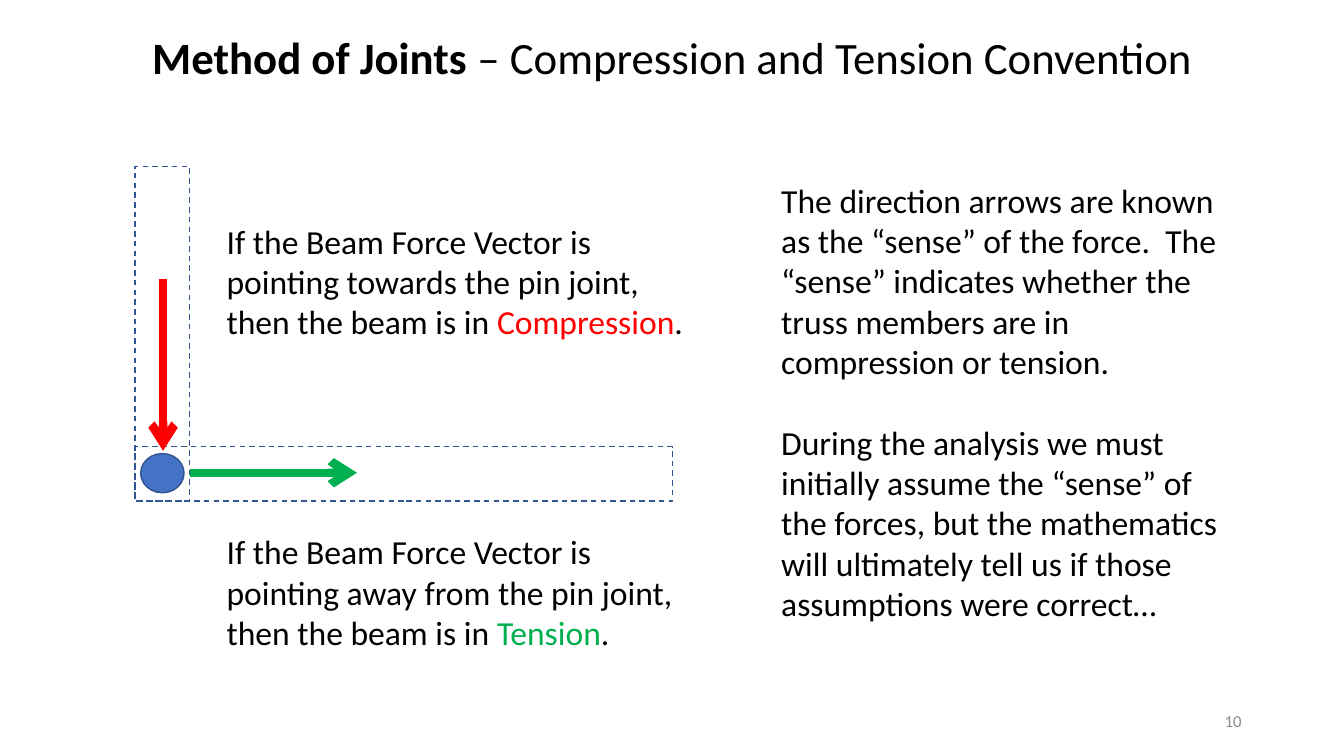
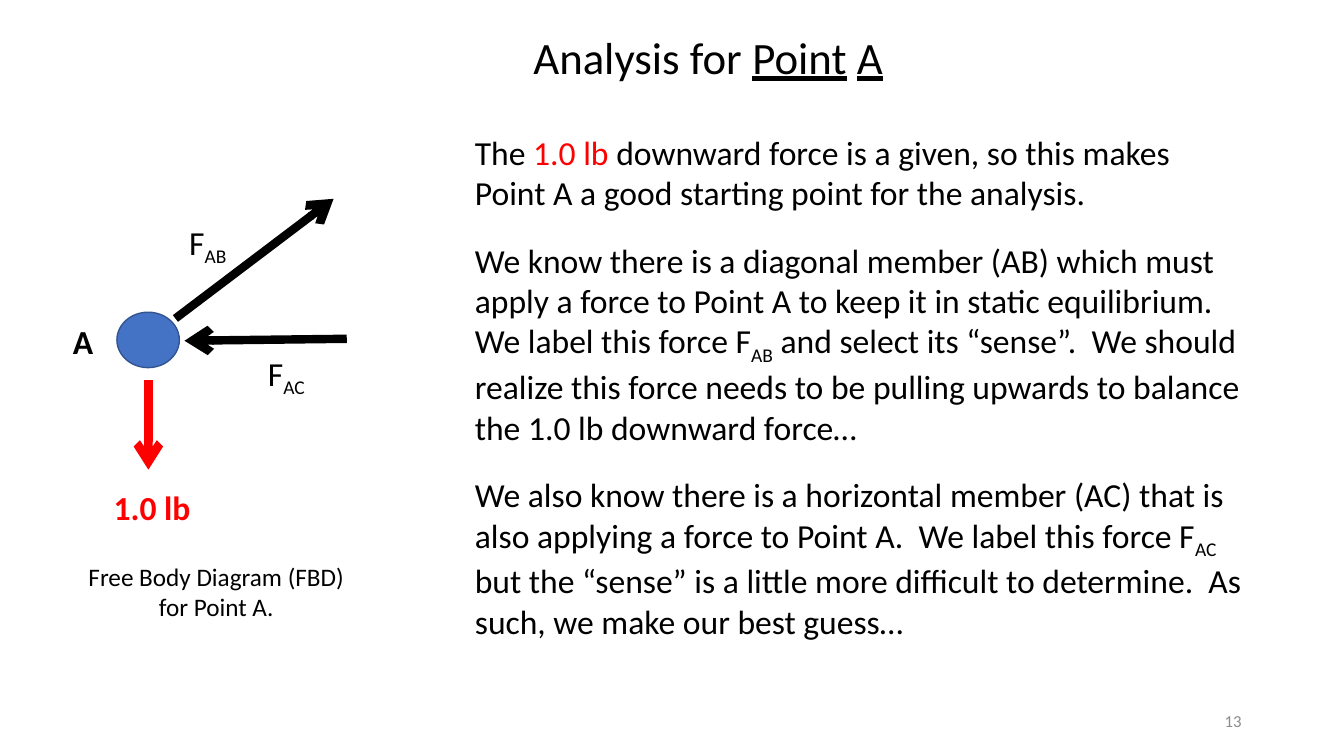
from dataclasses import dataclass

from lxml import etree
from pptx import Presentation
from pptx.dml.color import RGBColor
from pptx.enum import dml, shapes, text
from pptx.oxml import ns
from pptx.util import Pt


@dataclass(frozen=True)
class Theme:
    font: str = "Calibri"
    ink: str = "000000"
    grey: str = "8C8C8C"
    red: str = "FF0000"
    green: str = "00B050"
    blue: str = "4472C4"
    edge: str = "325491"
    title: int = 32
    body: int = 24
    note: int = 18
    foot: int = 12
    force: int = 6
    thin: int = 1


T = Theme()
ALIGN = text.PP_ALIGN
SHAPE = shapes.MSO_SHAPE


def rgb(code):
    return RGBColor.from_string(code)


def place(shape, box):
    shape.left, shape.top, shape.width, shape.height = map(Pt, box)


def add_run(para, part, size, color):
    """Add a string, or a (string, style) pair."""
    words, style = (part, {}) if isinstance(part, str) else part
    run = para.add_run()
    run.text = words
    font = run.font
    font.name, font.size = T.font, Pt(size)
    font.color.rgb = rgb(style.get("color", color))
    font.bold = style.get("bold", False)
    font.underline = style.get("under", False)
    if style.get("sub"):
        run._r.get_or_add_rPr().set("baseline", "-25000")


def fill(shape, paras, size=T.body, color=T.ink, align=ALIGN.LEFT,
         anchor=text.MSO_ANCHOR.TOP, gap=0):
    frame = shape.text_frame
    frame.word_wrap = True
    frame.auto_size = text.MSO_AUTO_SIZE.NONE
    frame.vertical_anchor = anchor
    for i, parts in enumerate(paras):
        para = frame.add_paragraph() if i else frame.paragraphs[0]
        para.alignment = align
        para.space_before = Pt(gap if i else 0)
        for part in parts:
            add_run(para, part, size, color)


def add_text(slide, box, parts, **style):
    fill(slide.shapes.add_textbox(*map(Pt, box)), [parts], **style)


def add_shape(slide, kind, box, paint=None, dash=False):
    shape = slide.shapes.add_shape(kind, *map(Pt, box))
    shape.shadow.inherit = False
    if paint:
        shape.fill.solid()
        shape.fill.fore_color.rgb = rgb(paint)
    else:
        shape.fill.background()
    shape.line.color.rgb = rgb(T.edge)
    shape.line.width = Pt(T.thin)
    if dash:
        shape.line.dash_style = dml.MSO_LINE.DASH


def add_force(slide, start, end, color):
    line = slide.shapes.add_connector(
        shapes.MSO_CONNECTOR.STRAIGHT, *map(Pt, (*start, *end)))
    line.line.color.rgb = rgb(color)
    line.line.width = Pt(T.force)
    props = line.element.spPr
    etree.SubElement(props.get_or_add_ln(), ns.qn("a:tailEnd"), type="arrow")
    etree.SubElement(props, ns.qn("a:effectLst"))


def add_page(deck, number, title, title_box, paras, body_box, gap):
    slide = deck.slides.add_slide(deck.slide_layouts[1])
    head, body = slide.placeholders
    place(head, title_box)
    fill(head, [title], size=T.title, align=ALIGN.CENTER)
    place(body, body_box)
    fill(body, paras, gap=gap)
    for para in body.text_frame.paragraphs:
        props = para._p.get_or_add_pPr()
        props.set("marL", "0")
        props.set("indent", "0")
        etree.SubElement(props, ns.qn("a:buNone"))
    add_text(slide, (678, 500.5, 216, 28.8), [number], size=T.foot,
             color=T.grey, align=ALIGN.RIGHT, anchor=text.MSO_ANCHOR.MIDDLE)
    return slide


def draw_joint(slide, box):
    """Two beams that meet at a pin, in the lower left corner of the box."""
    x, y, w, h = box
    beam = 39
    low = y + h - beam
    add_shape(slide, SHAPE.OVAL, (x + 4, low + 5, 31, 28), T.blue)
    add_shape(slide, SHAPE.RECTANGLE, (x, low, w, beam), dash=True)
    add_shape(slide, SHAPE.RECTANGLE, (x, y, beam, h), dash=True)
    add_force(slide, (x + 20, y + 80.5), (x + 20, y + 203), T.red)
    add_force(slide, (x + beam, low + 18.7), (x + 158.5, low + 18.7), T.green)
    cases = ((35, "towards", "Compression", T.red),
             (257, "away from", "Tension", T.green))
    for down, way, state, color in cases:
        add_text(slide, (x + 58.3, y + down, 342.7, 94.3), [
            f"If the Beam Force Vector is pointing {way} the pin joint, "
            "then the beam is in ", (state, {"color": color}), "."])


def draw_body(slide, x, y):
    """The free body diagram of point A."""
    add_shape(slide, SHAPE.OVAL, (x + 38.5, y + 81, 44.6, 39.6), T.blue)
    forces = (((61, 129.5), (61, 193.5), T.red),
              ((80.3, 85.5), (193.3, 0), T.ink),
              ((202.7, 100), (86.8, 101.4), T.ink))
    for (a, b), (c, d), color in forces:
        add_force(slide, (x + a, y + b), (x + c, y + d), color)
    bold = {"bold": True}
    labels = ((0, 84, 34.6, [("A", bold)]),
              (29, 202, 79, [("1.0 lb", {"bold": True, "color": T.red})]),
              (83, 12.8, 70, ["F", ("AB", SUB)]),
              (139.3, 106.4, 70, ["F", ("AC", SUB)]))
    for left, down, wide, parts in labels:
        add_text(slide, (x + left, y + down, wide, 36), parts)
    add_text(slide, (x + 4, y + 255.5, 211, 51),
             ["Free Body Diagram (FBD) for Point A."],
             size=T.note, align=ALIGN.CENTER)


SUB = {"sub": True}
LINE = {"under": True}


def add_rule(deck):
    slide = add_page(
        deck, "10",
        [("Method of Joints ", {"bold": True}),
         "– Compression and Tension Convention"],
        (83.5, 17.3, 793.5, 46),
        [["The direction arrows are known as the “sense” of the force.  The "
          "“sense” indicates whether the truss members are in compression "
          "or tension."],
         ["During the analysis we must initially assume the “sense” of the "
          "forces, but the mathematics will ultimately tell us if those "
          "assumptions were correct…"]],
        (550.8, 124.6, 342.7, 327), gap=29)
    draw_joint(slide, (96.5, 119, 384, 239))


def add_point(deck):
    slide = add_page(
        deck, "13",
        ["Analysis for ", ("Point", LINE), " ", ("A", LINE)],
        (222.5, 17.3, 566.6, 46),
        [["The ", ("1.0 lb ", {"color": T.red}),
          "downward force is a given, so this makes Point A a good starting "
          "point for the analysis."],
         ["We know there is a diagonal member (AB) which must apply a force "
          "to Point A to keep it in static equilibrium.  We label this "
          "force F", ("AB", SUB),
          " and select its “sense”.  We should realize this force needs to "
          "be pulling upwards to balance the 1.0 lb downward force…"],
         ["We also know there is a horizontal member (AC) that is also "
          "applying a force to Point A.  We label this force F", ("AC", SUB),
          " but the “sense” is a little more difficult to determine.  As "
          "such, we make our best guess…"]],
        (332, 90.5, 564, 369), gap=19.5)
    draw_body(slide, 45, 142)


def main():
    deck = Presentation()
    deck.slide_width, deck.slide_height = Pt(960), Pt(540)
    add_rule(deck)
    add_point(deck)
    deck.save("out.pptx")


if __name__ == "__main__":
    main()
